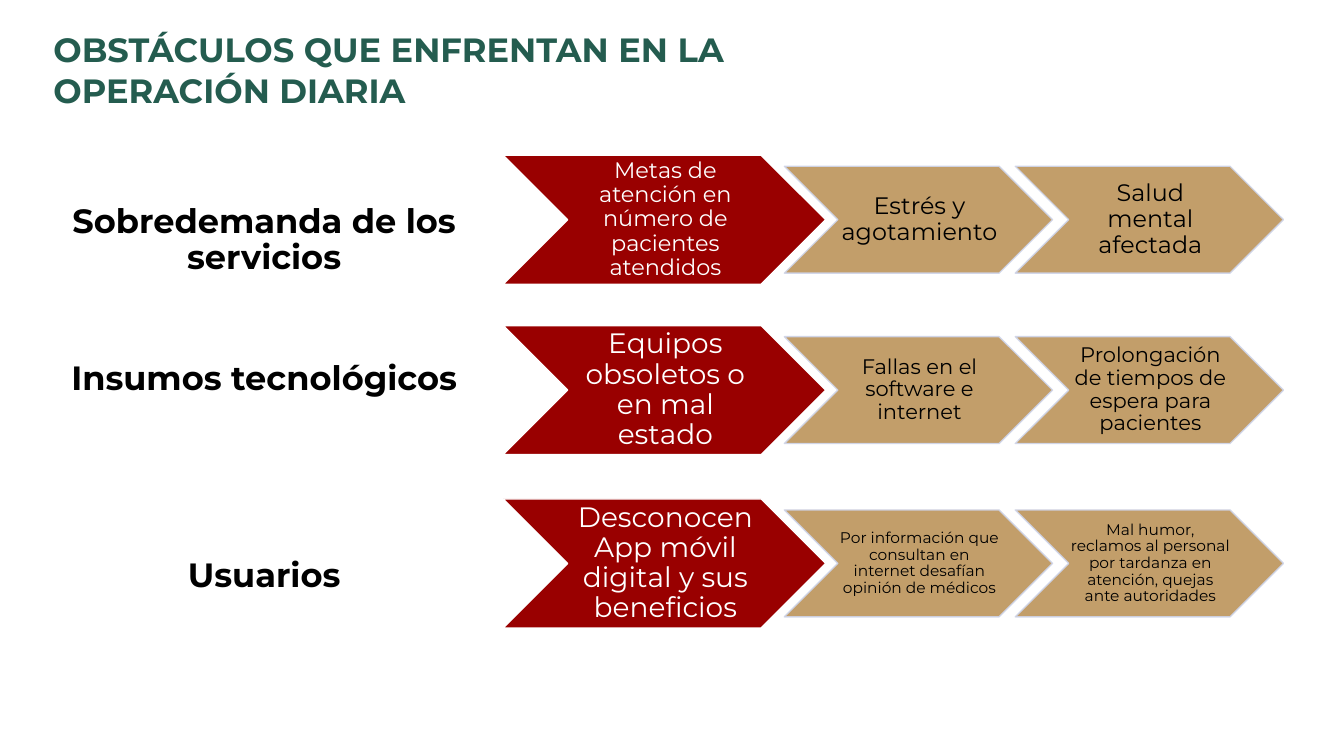
from lxml.etree import SubElement
from pptx import Presentation
from pptx.dml.color import RGBColor
from pptx.enum.shapes import MSO_SHAPE
from pptx.enum.text import MSO_ANCHOR, MSO_AUTO_SIZE, PP_ALIGN
from pptx.oxml.ns import qn
from pptx.util import Inches, Pt

TITLE = "OBSTÁCULOS QUE ENFRENTAN EN LA OPERACIÓN DIARIA"
OBSTACLES = [
    {"label": "Sobredemanda de los servicios", "label_top": 1.98, "label_height": 0.44, "middle": 2.18,
     "steps": [("Metas de atención en número de pacientes atendidos", 16),
               ("Estrés y agotamiento", 17),
               ("Salud mental afectada", 17)]},
    {"label": "Insumos tecnológicos", "label_top": 3.54, "label_height": 0.9, "middle": 3.87,
     "steps": [("Equipos obsoletos o en mal estado", 20),
               ("Fallas en el software e internet", 15),
               ("Prolongación de tiempos de espera para pacientes", 15)]},
    {"label": "Usuarios", "label_top": 5.49, "label_height": 0.52, "middle": 5.59,
     "steps": [("Desconocen App móvil digital y sus beneficios", 20),
               ("Por información que consultan en internet desafían opinión de médicos", 11),
               ("Mal humor, reclamos al personal por tardanza en atención, quejas ante autoridades", 11)]},
]
COLORS = {"title": "245C4F", "black": "000000", "white": "FFFFFF",
          "cause": "990000", "effect": "BC945A", "effect_line": "CFD5EA"}
FONT = "Montserrat"
CAUSE = {"width": 3.2, "height": 1.28, "fill": "cause", "line": "white", "text": "white", "opacity": 100}
EFFECT = {"width": 2.66, "height": 1.06, "fill": "effect", "line": "effect_line", "text": "black", "opacity": 90}
CAUSE_LEFT, EFFECT_LEFT, EFFECT_STEP = 4.99, 7.78, 2.29


def color(name):
    return RGBColor.from_string(COLORS[name])


def write(frame, text, size, color_name, bold=False, align=PP_ALIGN.CENTER, spacing=0.9):
    frame.word_wrap = True
    frame.text = text
    paragraph = frame.paragraphs[0]
    paragraph.alignment = align
    paragraph.line_spacing = spacing
    paragraph.font.name = FONT
    paragraph.font.size = Pt(size)
    paragraph.font.bold = bold
    paragraph.font.color.rgb = color(color_name)


def add_chevron(slide, left, middle, style, text, size):
    shape = slide.shapes.add_shape(
        MSO_SHAPE.CHEVRON, Inches(left), Inches(middle - style["height"] / 2),
        Inches(style["width"]), Inches(style["height"]))
    shape.shadow.inherit = False
    shape.fill.solid()
    shape.fill.fore_color.rgb = color(style["fill"])
    shape.line.color.rgb = color(style["line"])
    shape.line.width = Pt(1)
    if style["opacity"] < 100:
        for rgb in shape.element.spPr.iter(qn("a:srgbClr")):
            SubElement(rgb, qn("a:alpha")).set("val", str(style["opacity"] * 1000))
    frame = shape.text_frame
    frame.margin_left, frame.margin_right = Inches(0.02), 0
    frame.margin_top = frame.margin_bottom = Inches(0.01)
    frame.vertical_anchor = MSO_ANCHOR.MIDDLE
    write(frame, text, size, style["text"])


def main():
    presentation = Presentation()
    presentation.slide_width, presentation.slide_height = Inches(13.33), Inches(7.5)
    slide = presentation.slides.add_slide(presentation.slide_layouts[5])

    title = slide.shapes.title
    title.left, title.top = Inches(0.43), Inches(0.24)
    title.width, title.height = Inches(8.63), Inches(0.91)
    title.text_frame.auto_size = MSO_AUTO_SIZE.NONE
    title.text_frame.vertical_anchor = MSO_ANCHOR.TOP
    write(title.text_frame, TITLE, 24, "title", True, PP_ALIGN.LEFT, 1.0)

    for obstacle in OBSTACLES:
        label = slide.shapes.add_textbox(
            Inches(0.24), Inches(obstacle["label_top"]),
            Inches(4.76), Inches(obstacle["label_height"]))
        write(label.text_frame, obstacle["label"], 24, "black", True)

        cause, *effects = obstacle["steps"]
        add_chevron(slide, CAUSE_LEFT, obstacle["middle"], CAUSE, *cause)
        for index, effect in enumerate(effects):
            add_chevron(slide, EFFECT_LEFT + index * EFFECT_STEP, obstacle["middle"], EFFECT, *effect)

    presentation.save("out.pptx")


if __name__ == "__main__":
    main()
